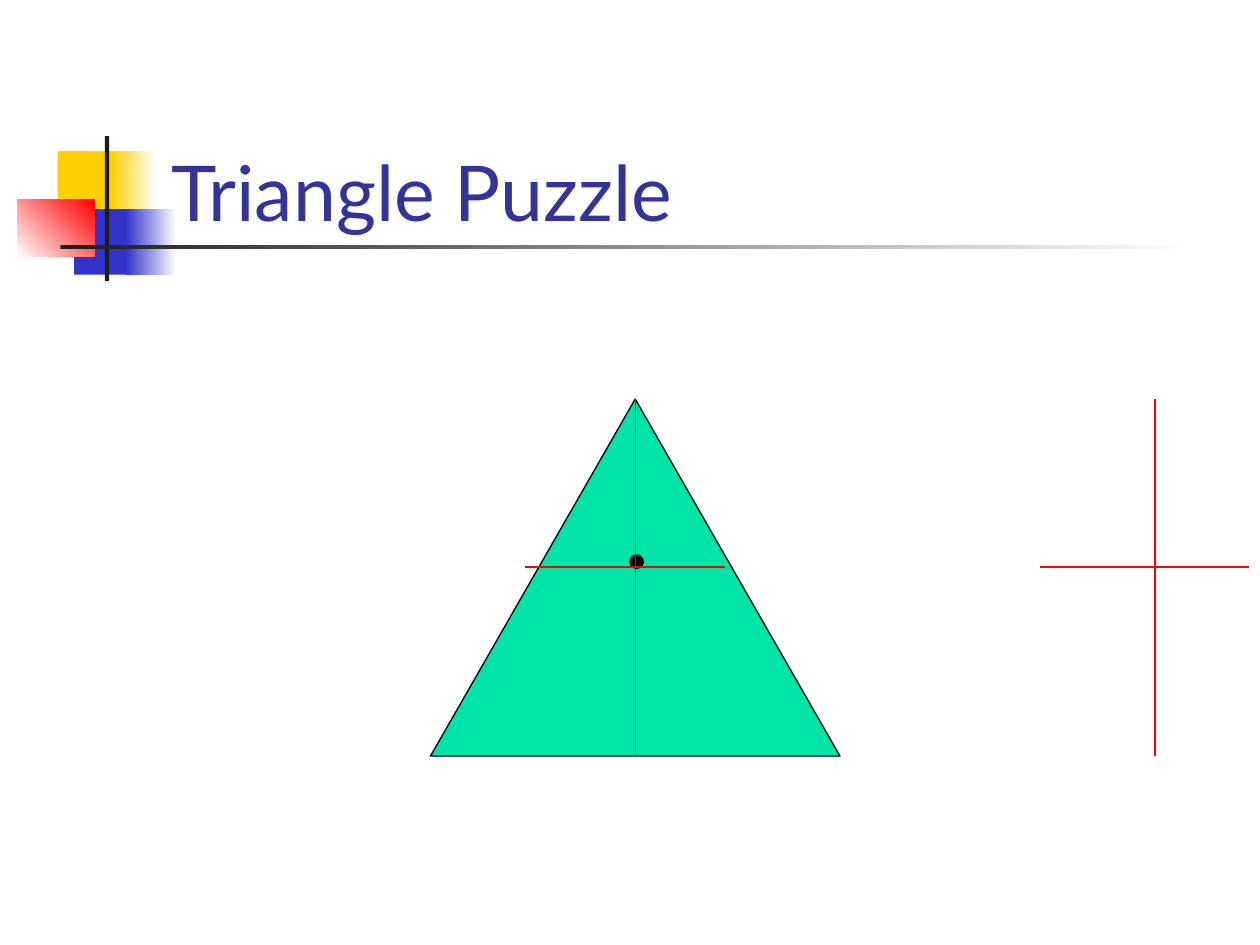
from lxml import etree
from pptx import Presentation
from pptx.dml.color import RGBColor
from pptx.enum import shapes as kinds, text as txt
from pptx.oxml import ns
from pptx.util import Pt


def hue(code):
    """Turn a hex string into a colour."""
    return RGBColor.from_string(code)


def write(frame, words, font="Lato", size=44, color="000000", anchor="t", wrap=True, fit="none"):
    """Put formatted words in a text frame."""
    frame.vertical_anchor = {"t": txt.MSO_ANCHOR.TOP, "b": txt.MSO_ANCHOR.BOTTOM}[anchor]
    frame.auto_size = {"none": txt.MSO_AUTO_SIZE.NONE,
                       "grow": txt.MSO_AUTO_SIZE.SHAPE_TO_FIT_TEXT}[fit]
    frame.word_wrap = wrap
    para = frame.paragraphs[0]
    para.alignment = txt.PP_ALIGN.LEFT
    run = para.add_run()
    run.text = words
    run.font.name, run.font.size = font, Pt(size)
    run.font.color.rgb = hue(color)


def shape(slide, kind, box, fill, line=None, angle=0):
    """Add a preset shape with a solid fill, or a gradient for two colours."""
    item = slide.shapes.add_shape(kind, *map(Pt, box))
    item.shadow.inherit = False
    if isinstance(fill, tuple):
        item.fill.gradient()
        item.fill.gradient_angle = angle
        for stop, code in zip(item.fill.gradient_stops, fill):
            stop.color.rgb = hue(code)
    else:
        item.fill.solid()
        item.fill.fore_color.rgb = hue(fill)
    if line:
        item.line.color.rgb = hue(line)
        item.line.width = Pt(0.75)
    else:
        item.line.fill.background()
    return item


def emblem(slide, left, top):
    """Draw the coloured blocks and the two bars beside the title."""
    parts = [
        ((23, 8.64, 34.56, 37.44), "FFCF01", 0),
        ((53.28, 8.64, 25.92, 37.44), ("FFCF01", "FFFFFF"), 0),
        ((32.4, 41.76, 33.12, 37.44), "3333CC", 0),
        ((62, 41.76, 28.8, 37.44), ("3333CC", "FFFFFF"), 0),
        ((0, 36, 44, 33.12), ("FFFFFF", "FF0000"), 45),
        ((49.9, 0, 2.5, 82.8), "1C1C1C", 0),
        ((24.5, 62.3, 648, 2.5), ("1C1C1C", "FFFFFF"), 0),
    ]
    for (x, y, wide, high), fill, angle in parts:
        shape(slide, kinds.MSO_SHAPE.RECTANGLE, (left + x, top + y, wide, high),
              fill, angle=angle)


def heading(slide, box, words):
    """Place and format the title."""
    title = slide.shapes.title
    title.left, title.top, title.width, title.height = map(Pt, box)
    write(title.text_frame, words, color="333399", anchor="b")


def cross(slide, box, across, down):
    """Draw a grouped red cross whose arms meet at the given offsets."""
    left, top, wide, high = box
    group = slide.shapes.add_group_shape()
    arms = [(left + across, top, left + across, top + high),
            (left, top + down, left + wide, top + down)]
    for ends in arms:
        arm = group.shapes.add_connector(kinds.MSO_CONNECTOR.STRAIGHT, *map(Pt, ends))
        arm.line.color.rgb = hue("FF0000")
        arm.line.width = Pt(0.75)
        etree.SubElement(arm._element.spPr, ns.qn("a:effectLst"))


def puzzle(slide, left, top, wide, high):
    """Draw the triangle, its dot and the two crosses."""
    shape(slide, kinds.MSO_SHAPE.ISOSCELES_TRIANGLE, (left, top, wide, high),
          "00E4A8", line="000000")
    dot = slide.shapes.add_textbox(*map(Pt, (left + 103, top + 27.5, 34.5, 86.4)))
    write(dot.text_frame, ".", size=66, wrap=False, fit="grow")
    cross(slide, (left + 348, top, 120, high), 66, 96)
    cross(slide, (left + 54, top, 114, high), 63, 96)


def main():
    """Build and save the slide."""
    deck = Presentation()
    deck.slide_width, deck.slide_height = Pt(720), Pt(540)
    slide = deck.slides.add_slide(deck.slide_layouts[5])
    emblem(slide, 10, 77.76)
    heading(slide, (90.72, 49, 613.44, 90), "Triangle Puzzle")
    puzzle(slide, 246, 228, 234, 204)
    deck.save("out.pptx")


if __name__ == "__main__":
    main()
